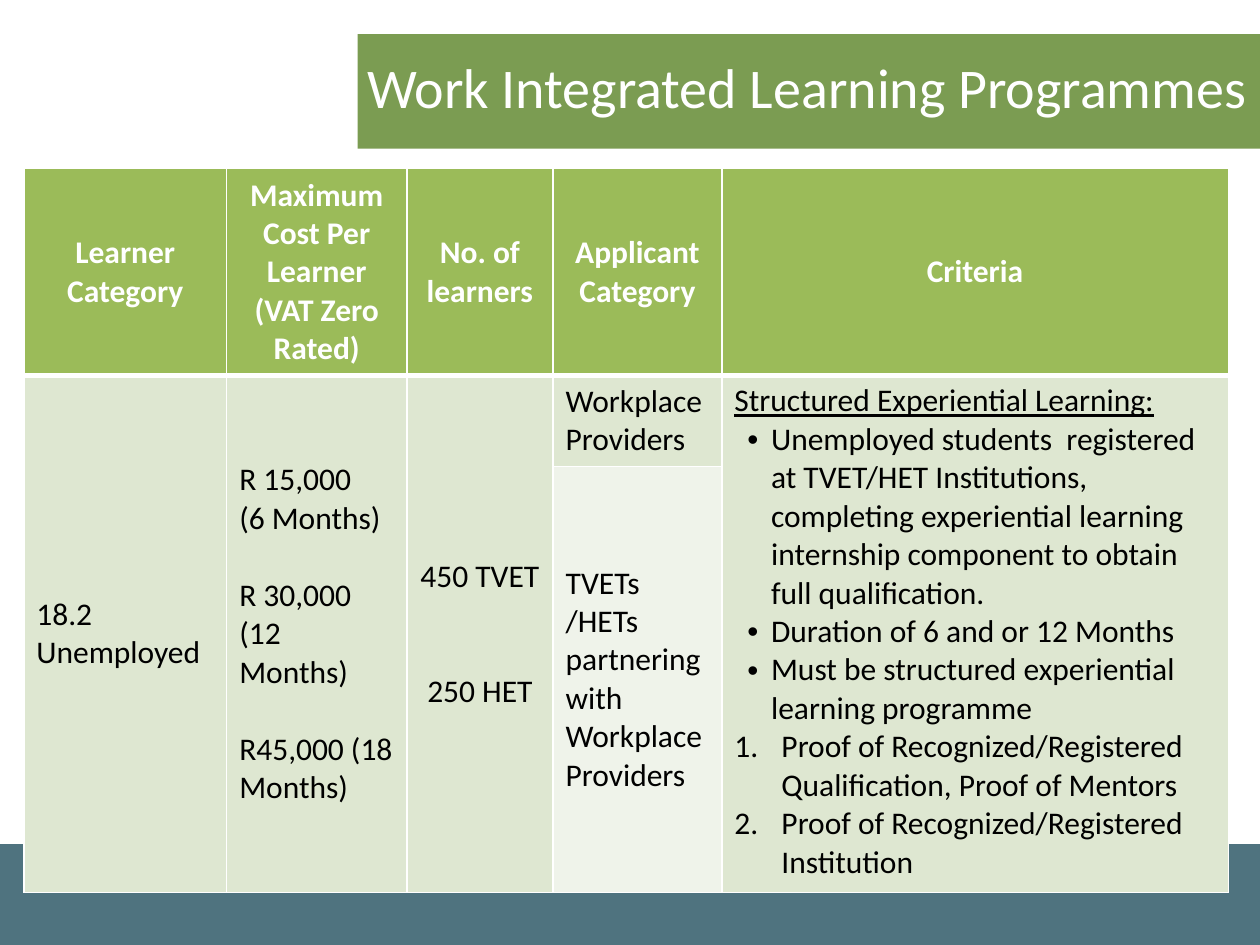
import pptx
import pptx.util
import pptx.dml.color
import pptx.enum.shapes
import pptx.enum.text
import pptx.oxml.ns
from lxml import etree

Cm, Pt = pptx.util.Cm, pptx.util.Pt
Align, Anchor = pptx.enum.text.PP_ALIGN, pptx.enum.text.MSO_ANCHOR
qn = pptx.oxml.ns.qn

COLORS = {"white": "FFFFFF", "text": "000000", "footer": "4F737F", "banner": "7B9C52",
          "header": "9BBB59", "body": "DEE7D1", "body_light": "EFF3EA"}
FONT = "Calibri"
LINE = 22  # points in one line of table text

COLUMN_WIDTHS = [4.09, 3.63, 2.95, 3.4, 10.21]
ROW_HEIGHTS = [4.17, 1.83, 8.59]
HEADINGS = ["Learner Category", "Maximum Cost Per Learner (VAT Zero Rated)",
            "No. of learners", "Applicant Category", "Criteria"]
CATEGORY = ["18.2", "Unemployed"]
COSTS = ["R 15,000\v(6 Months)", "R 30,000 (12 Months)", "R45,000 (18 Months)"]
LEARNERS = ["450 TVET", "250 HET"]
CRITERIA_HEADING = "Structured Experiential Learning:"
CRITERIA_BULLETS = [
    "Unemployed students  registered  at TVET/HET Institutions, completing experiential "
    "learning internship component to obtain full qualification.",
    "Duration of 6 and or 12 Months",
    "Must be structured experiential learning programme",
]
CRITERIA_NUMBERED = [
    "Proof of Recognized/Registered Qualification, Proof of Mentors",
    "Proof of Recognized/Registered Institution",
]


def rgb(name):
    return pptx.dml.color.RGBColor.from_string(COLORS[name])


def style_font(paragraph, size, color, bold=False):
    font = paragraph.font
    font.name, font.size, font.bold = FONT, Pt(size), bold
    font.color.rgb = rgb(color)


def add_band(slide, left, top, width, height, color):
    band = slide.shapes.add_shape(pptx.enum.shapes.MSO_SHAPE.RECTANGLE,
                                  Cm(left), Cm(top), Cm(width), Cm(height))
    band.shadow.inherit = False
    band.fill.solid()
    band.fill.fore_color.rgb = rgb(color)
    band.line.fill.background()


def set_title(slide, text):
    """Fill the title placeholder and bring it in front of the bands."""
    title = slide.shapes.title
    title.left, title.top, title.width, title.height = Cm(2.54), Cm(0.15), Cm(22.86), Cm(3.18)
    title.text_frame.text = text
    title.text_frame.vertical_anchor = Anchor.MIDDLE
    heading = title.text_frame.paragraphs[0]
    heading.alignment = Align.RIGHT
    style_font(heading, 32, "white")
    title.element.getparent().append(title.element)


def set_borders(cell, bottom_width):
    properties = cell._tc.get_or_add_tcPr()
    for side, width in (("L", 1), ("R", 1), ("T", 1), ("B", bottom_width)):
        line = etree.SubElement(properties, qn(f"a:ln{side}"), w=str(Pt(width)))
        fill = etree.SubElement(line, qn("a:solidFill"))
        etree.SubElement(fill, qn("a:srgbClr"), val=COLORS["white"])


def paint_cell(cell, color, bottom_width=1):
    set_borders(cell, bottom_width)
    cell.fill.solid()
    cell.fill.fore_color.rgb = rgb(color)


def write_cell(cell, texts, color="text", bold=False, align=Align.LEFT, gap_lines=0):
    """Write one paragraph per text, with gap_lines empty lines of space between them."""
    cell.vertical_anchor = Anchor.MIDDLE
    cell.text = "\n".join(texts)
    for index, paragraph in enumerate(cell.text_frame.paragraphs):
        paragraph.alignment = align
        if index and gap_lines:
            paragraph.space_before = Pt(gap_lines * LINE)
        style_font(paragraph, 18, color, bold)


def add_marker(paragraph, tag, indent, hang, **attributes):
    properties = paragraph._p.get_or_add_pPr()
    properties.set("marL", str(Cm(indent)))
    properties.set("indent", str(-Cm(hang)))
    if tag == "a:buChar":
        etree.SubElement(properties, qn("a:buFont"), typeface="Arial")
    etree.SubElement(properties, qn(tag), **attributes)


def write_criteria(cell):
    cell.vertical_anchor = Anchor.TOP
    cell.text = "\n".join([CRITERIA_HEADING, *CRITERIA_BULLETS, *CRITERIA_NUMBERED])
    heading, *items = cell.text_frame.paragraphs
    for index, item in enumerate(items):
        if index < len(CRITERIA_BULLETS):
            add_marker(item, "a:buChar", 0.74, 0.48, char="•")
        else:
            add_marker(item, "a:buAutoNum", 0.95, 0.95, type="arabicPeriod")
    for paragraph in (heading, *items):
        style_font(paragraph, 18, "text")
    heading.font.underline = True


def add_programme_table(slide):
    table = slide.shapes.add_table(
        len(ROW_HEIGHTS), len(COLUMN_WIDTHS), Cm(0.48), Cm(3.4),
        Cm(sum(COLUMN_WIDTHS)), Cm(sum(ROW_HEIGHTS))).table
    for column, width in zip(table.columns, COLUMN_WIDTHS):
        column.width = Cm(width)
    for row, height in zip(table.rows, ROW_HEIGHTS):
        row.height = Cm(height)

    for column, heading in enumerate(HEADINGS):
        paint_cell(table.cell(0, column), "header", bottom_width=3)
        write_cell(table.cell(0, column), [heading], "white", True, Align.CENTER)
        paint_cell(table.cell(1, column), "body")
        paint_cell(table.cell(2, column), "body_light" if column == 3 else "body")
        if column != 3:
            table.cell(1, column).merge(table.cell(2, column))

    write_cell(table.cell(1, 0), CATEGORY)
    write_cell(table.cell(1, 1), COSTS, gap_lines=1)
    write_cell(table.cell(1, 2), LEARNERS, align=Align.CENTER, gap_lines=2)
    write_cell(table.cell(1, 3), ["Workplace Providers"])
    write_cell(table.cell(2, 3), ["TVETs /HETs partnering with Workplace Providers"])
    write_criteria(table.cell(1, 4))


def main():
    presentation = pptx.Presentation()
    presentation.slide_width, presentation.slide_height = Cm(25.4), Cm(19.05)
    slide = presentation.slides.add_slide(presentation.slide_layouts[5])
    add_band(slide, 0, 17.02, 25.4, 2.03, "footer")
    add_band(slide, 7.21, 0.69, 18.19, 2.31, "banner")
    set_title(slide, "Work Integrated Learning Programmes")
    add_programme_table(slide)
    presentation.save("out.pptx")


if __name__ == "__main__":
    main()
